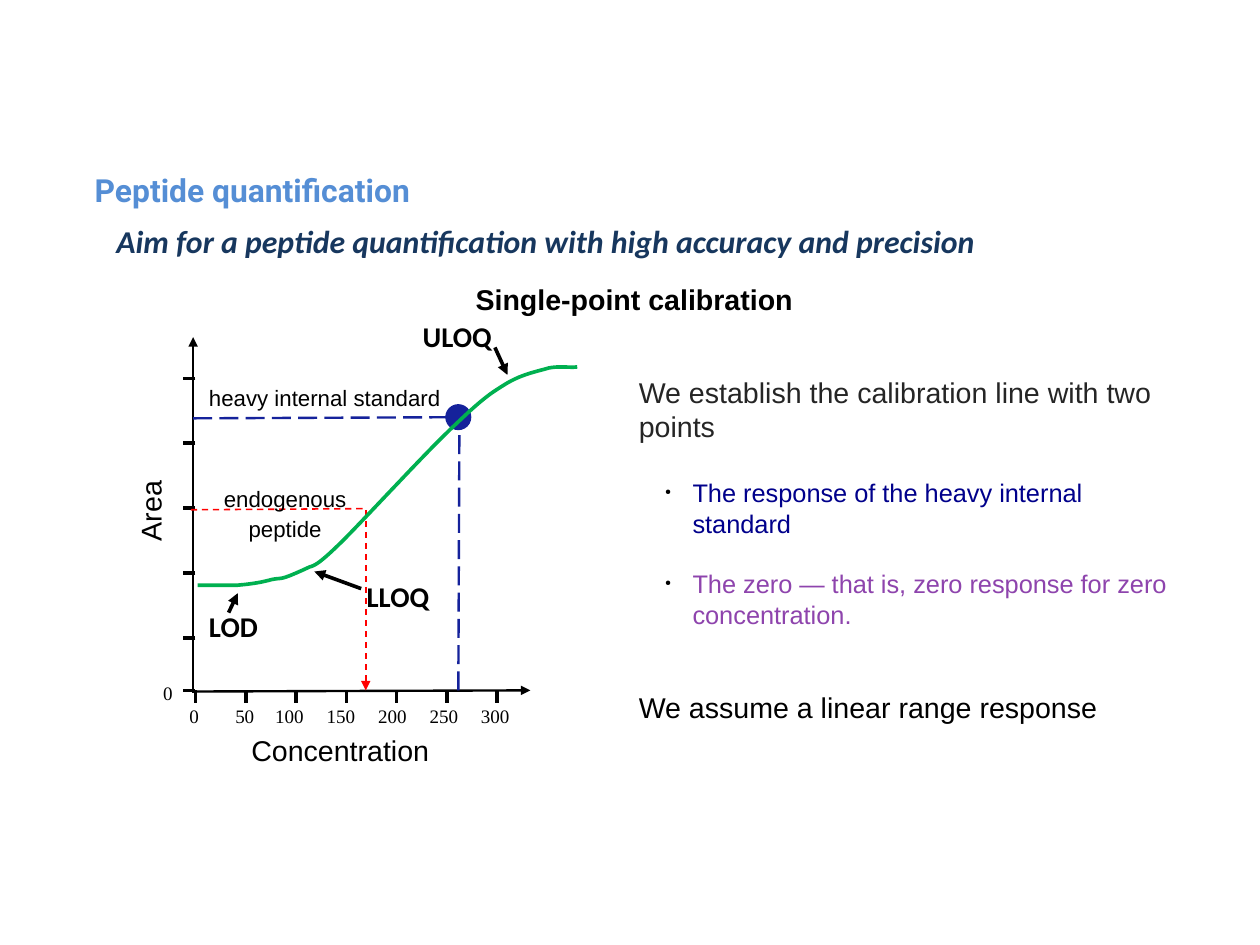
"""Build the single-point calibration slide on a grid of hundredths of an inch."""
import dataclasses

import pptx
import pptx.dml.color
import pptx.enum.dml
import pptx.enum.shapes
import pptx.enum.text
import pptx.oxml
import pptx.oxml.ns
import pptx.util

SLIDE_SIZE = pptx.util.Cm(28), pptx.util.Cm(21)
CELL = pptx.util.Inches(0.01)


@dataclasses.dataclass(frozen=True)
class Theme:
    black: str = "000000"
    heading: str = "558ED5"
    subtitle: str = "17375E"
    standard: str = "15229B"
    endogenous: str = "FF0000"
    curve: str = "00B050"
    body: str = "252525"
    response: str = "00008B"
    zero: str = "8E44AD"
    title_size: int = 20
    label_size: int = 18
    bullet_size: int = 16
    note_size: int = 14
    tick_size: int = 12
    sans: str = "Arial"
    serif: str = "Times New Roman"
    callout: str = "Calibri"
    display: str = "Roboto"


THEME = Theme()

TITLES = [
    ("Peptide quantification", (73, 136, 556, 60),
     dict(font=THEME.display, color=THEME.heading)),
    ("Aim for a peptide quantification with high accuracy and precision",
     (92, 181, 923, 60), dict(font=THEME.callout, color=THEME.subtitle, italic=True)),
]
AXIS_TITLES = [("Area", (92, 418, 85, 46), 270), ("Concentration", (210, 636, 178, 46), 0)]
X_LABELS = [("0", 156), ("50", 196)] + [(str(100 + 50 * i), 231 + 45 * i) for i in range(5)]
TICK_LABELS = [(label, left, 611) for label, left in X_LABELS] + [("0", 133, 591)]
CALLOUTS = [
    ("LOD", (173, 528, 66, 25), (200, 536), (208, 519)),
    ("LLOQ", (311, 502, 80, 25), (316, 515), (275, 500)),
    ("ULOQ", (360, 274, 86, 25), (433, 304), (444, 328)),
]
AXES = [((169, 606), (169, 295)), ((168, 605), (464, 604))]
X_TICKS = [171 + 44 * i for i in range(7)]
Y_TICKS = [331 + 56.75 * i for i in range(5)] + [604]
GUIDES = [
    ((401, 604), (402, 360), THEME.standard, 1.5, "LONG_DASH", False),
    ((169, 366), (401, 365), THEME.standard, 1.5, "LONG_DASH", False),
    ((167, 446), (320, 445), THEME.endogenous, 1, "DASH", False),
    ((320, 446), (320, 604), THEME.endogenous, 1, "DASH", True),
]
CURVE_START = (173, 512)
CURVE_BENDS = [
    ((185, 512), (197, 512), (208, 512)),
    ((219, 511), (227, 510), (238, 507)),
    ((248, 505), (243, 509), (271, 496)),
    ((275, 495), (280, 493), (301, 472)),
    ((322, 451), (376, 392), (400, 370)),
    ((424, 347), (431, 343), (444, 335)),
    ((458, 327), (470, 325), (480, 322)),
    ((490, 320), (499, 322), (505, 321)),
]
EXPLANATION = [
    ("We establish the calibration line with two points",
     dict(color=THEME.body)),
    ("The response of the heavy internal standard",
     dict(color=THEME.response, size=THEME.bullet_size, bullet=True, before=21.5)),
    ("The zero — that is, zero response for zero concentration.",
     dict(color=THEME.zero, size=THEME.bullet_size, bullet=True, before=19)),
    ("We assume a linear range response", dict(before=38)),
]


def cells(*lengths):
    return [round(length * CELL) for length in lengths]


def rgb(color):
    return pptx.dml.color.RGBColor.from_string(color)


def add_xml(parent, tag, **attributes):
    element = pptx.oxml.parse_xml(f"<a:{tag} {pptx.oxml.ns.nsdecls('a')}/>")
    for name, value in attributes.items():
        element.set(name, value)
    parent.append(element)
    return element


def add_bullet(paragraph):
    paragraph.level = 1
    properties = paragraph._p.get_or_add_pPr()
    properties.set("marL", str(cells(47)[0]))
    properties.set("indent", str(cells(-24)[0]))
    add_xml(add_xml(properties, "buClr"), "srgbClr", val=THEME.black)
    add_xml(properties, "buSzPct", val="30000")
    add_xml(properties, "buChar", char="●")


def write(frame, text, *, first=True, size=THEME.label_size, font=THEME.sans,
          color=THEME.black, bold=False, italic=False, centered=False,
          spacing=None, before=0, bullet=False):
    paragraph = frame.paragraphs[0] if first else frame.add_paragraph()
    paragraph.alignment = getattr(pptx.enum.text.PP_ALIGN, "CENTER" if centered else "LEFT")
    paragraph.space_before = pptx.util.Pt(before)
    if spacing:
        paragraph.line_spacing = spacing
    if bullet:
        add_bullet(paragraph)
    run = paragraph.add_run()
    run.text = text
    run.font.size, run.font.name = pptx.util.Pt(size), font
    run.font.bold, run.font.italic = bold, italic
    run.font.color.rgb = rgb(color)


def add_text(slide, paragraphs, box, *, wrap=False, middle=False, rotation=0, **style):
    shape = slide.shapes.add_textbox(*cells(*box))
    shape.rotation = rotation
    frame = shape.text_frame
    frame.word_wrap = wrap
    frame.vertical_anchor = getattr(pptx.enum.text.MSO_ANCHOR, "MIDDLE" if middle else "TOP")
    for index, (text, extra) in enumerate(paragraphs):
        write(frame, text, first=index == 0, **{**style, **extra})


def add_line(slide, start, end, color=THEME.black, width=1.5, dash=None, arrow=False):
    connector = slide.shapes.add_connector(
        pptx.enum.shapes.MSO_CONNECTOR.STRAIGHT, *cells(*start, *end))
    connector.line.color.rgb = rgb(color)
    connector.line.width = pptx.util.Pt(width)
    if dash:
        connector.line.dash_style = getattr(pptx.enum.dml.MSO_LINE, dash)
    if arrow:
        add_xml(connector.line._get_or_add_ln(), "tailEnd", type="triangle")
    add_xml(connector._element.spPr, "effectLst")


def bezier(start, first, second, end, steps=12):
    for step in range(1, steps + 1):
        t = step / steps
        weights = ((1 - t) ** 3, 3 * t * (1 - t) ** 2, 3 * t * t * (1 - t), t ** 3)
        corners = (start, first, second, end)
        yield tuple(sum(w * c[axis] for w, c in zip(weights, corners)) for axis in (0, 1))


def add_curve(slide):
    points, start = [], CURVE_START
    for bend in CURVE_BENDS:
        points += [cells(*point) for point in bezier(start, *bend)]
        start = bend[-1]
    builder = slide.shapes.build_freeform(*cells(*CURVE_START), scale=1.0)
    builder.add_line_segments(points, close=False)
    curve = builder.convert_to_shape()
    curve.shadow.inherit = False
    curve.fill.background()
    curve.line.color.rgb = rgb(THEME.curve)
    curve.line.width = pptx.util.Pt(2.3)


def main():
    presentation = pptx.Presentation()
    presentation.slide_width, presentation.slide_height = SLIDE_SIZE
    slide = presentation.slides.add_slide(presentation.slide_layouts[6])

    for text, box, style in TITLES:
        add_text(slide, [(text, style)], box, middle=True, size=THEME.title_size, bold=True)
    for start, end in AXES:
        add_line(slide, start, end, arrow=True)
    for text, box, rotation in AXIS_TITLES:
        add_text(slide, [(text, {})], box, rotation=rotation)
    for x in X_TICKS:
        add_line(slide, (x, 604), (x, 615), width=2.25)
    for y in Y_TICKS:
        add_line(slide, (171, y), (160, y), width=2.25)
    for text, left, top in TICK_LABELS:
        add_text(slide, [(text, {})], (left, top, 36 + 12 * (len(text) - 1), 35),
                 size=THEME.tick_size, font=THEME.serif)
    for guide in GUIDES:
        add_line(slide, *guide)
    add_text(slide, [("heavy internal standard", {})], (173, 331, 223, 32),
             wrap=True, size=THEME.note_size)
    add_text(slide, [("endogenous", {}), ("peptide", {})], (186, 416, 127, 57),
             wrap=True, size=THEME.note_size, centered=True, spacing=1.15)

    marker = slide.shapes.add_shape(pptx.enum.shapes.MSO_SHAPE.OVAL, *cells(391, 355, 20, 20))
    marker.shadow.inherit = False
    marker.fill.solid()
    marker.fill.fore_color.rgb = marker.line.color.rgb = rgb(THEME.standard)
    marker.line.width = pptx.util.Pt(2)
    add_curve(slide)
    for text, box, start, end in CALLOUTS:
        add_text(slide, [(text, {})], box, font=THEME.callout, bold=True)
        add_line(slide, start, end, width=2.3, arrow=True)

    add_text(slide, [("Single-point calibration", {})], (390, 242, 330, 38),
             wrap=True, bold=True, centered=True)
    add_text(slide, EXPLANATION, (549, 323, 491, 370), wrap=True)
    presentation.save("out.pptx")


if __name__ == "__main__":
    main()
